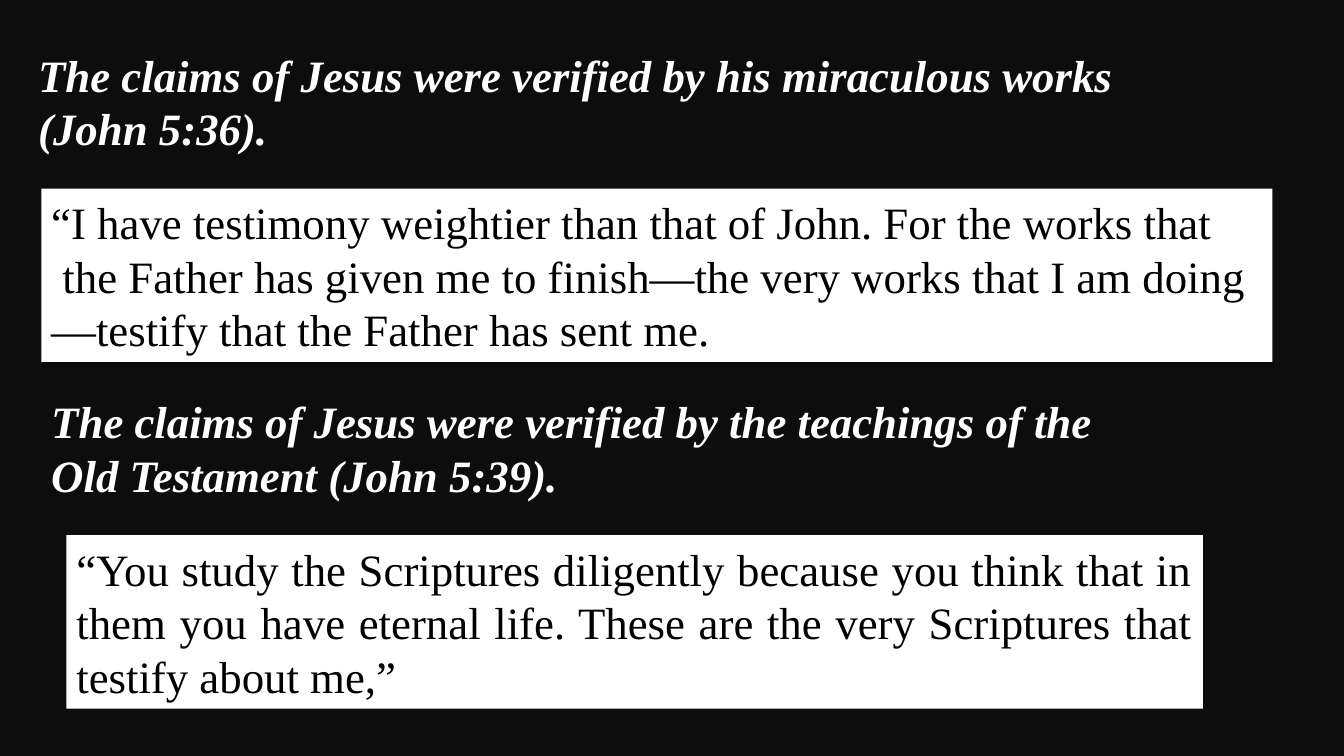
from pptx import Presentation
from pptx.dml.color import RGBColor
from pptx.enum.shapes import MSO_SHAPE as Shape
from pptx.enum.text import MSO_AUTO_SIZE as AutoSize, PP_ALIGN as Align
from pptx.util import Inches, Pt

COLORS = {"background": "0D0D0D", "claim": "FFFFFF", "panel": "FFFFFF", "verse": "000000"}


class ScriptureSlide:
    """Holds the text style and the slide being built."""

    font_name = "Times New Roman"
    font_size = Pt(32)

    def __init__(self, slide):
        self.slide = slide
        slide.background.fill.solid()
        slide.background.fill.fore_color.rgb = self.color("background")

    def color(self, role):
        return RGBColor.from_string(COLORS[role])

    def set_text(self, frame, text, role, align, emphasis=False):
        frame.text = text
        frame.word_wrap = True
        frame.auto_size = AutoSize.SHAPE_TO_FIT_TEXT
        for paragraph in frame.paragraphs:
            paragraph.alignment = align
            for run in paragraph.runs:
                run.font.name = self.font_name
                run.font.size = self.font_size
                run.font.bold = run.font.italic = emphasis
                run.font.color.rgb = self.color(role)

    def claim(self, text, left, top, width, height):
        box = self.slide.shapes.add_textbox(
            Inches(left), Inches(top), Inches(width), Inches(height))
        self.set_text(box.text_frame, text, "claim", Align.LEFT, emphasis=True)

    def verse(self, text, left, top, width, height):
        panel = self.slide.shapes.add_shape(
            Shape.RECTANGLE, Inches(left), Inches(top), Inches(width), Inches(height))
        panel.shadow.inherit = False
        panel.fill.solid()
        panel.fill.fore_color.rgb = self.color("panel")
        panel.line.fill.background()
        self.set_text(panel.text_frame, text, "verse", Align.JUSTIFY)


def main():
    deck = Presentation()
    deck.slide_width, deck.slide_height = Inches(13.33), Inches(7.5)
    page = ScriptureSlide(deck.slides.add_slide(deck.slide_layouts[6]))

    # Miraculous works
    page.claim("The claims of Jesus were verified by his miraculous works\n"
               "(John 5:36).", 0.28, 0.42, 12.88, 1.18)
    page.verse("“I have testimony weightier than that of John. For the works that\n"
               " the Father has given me to finish—the very works that I am doing\n"
               "—testify that the Father has sent me.", 0.41, 1.87, 12.21, 1.72)

    # Old Testament teachings
    page.claim("The claims of Jesus were verified by the teachings of the "
               "Old Testament (John 5:39).", 0.41, 3.86, 11.25, 1.18)
    page.verse("“You study the Scriptures diligently because you think that in "
               "them you have eternal life. These are the very Scriptures that "
               "testify about me,”", 0.66, 5.31, 11.27, 1.72)

    deck.save("out.pptx")


if __name__ == "__main__":
    main()
